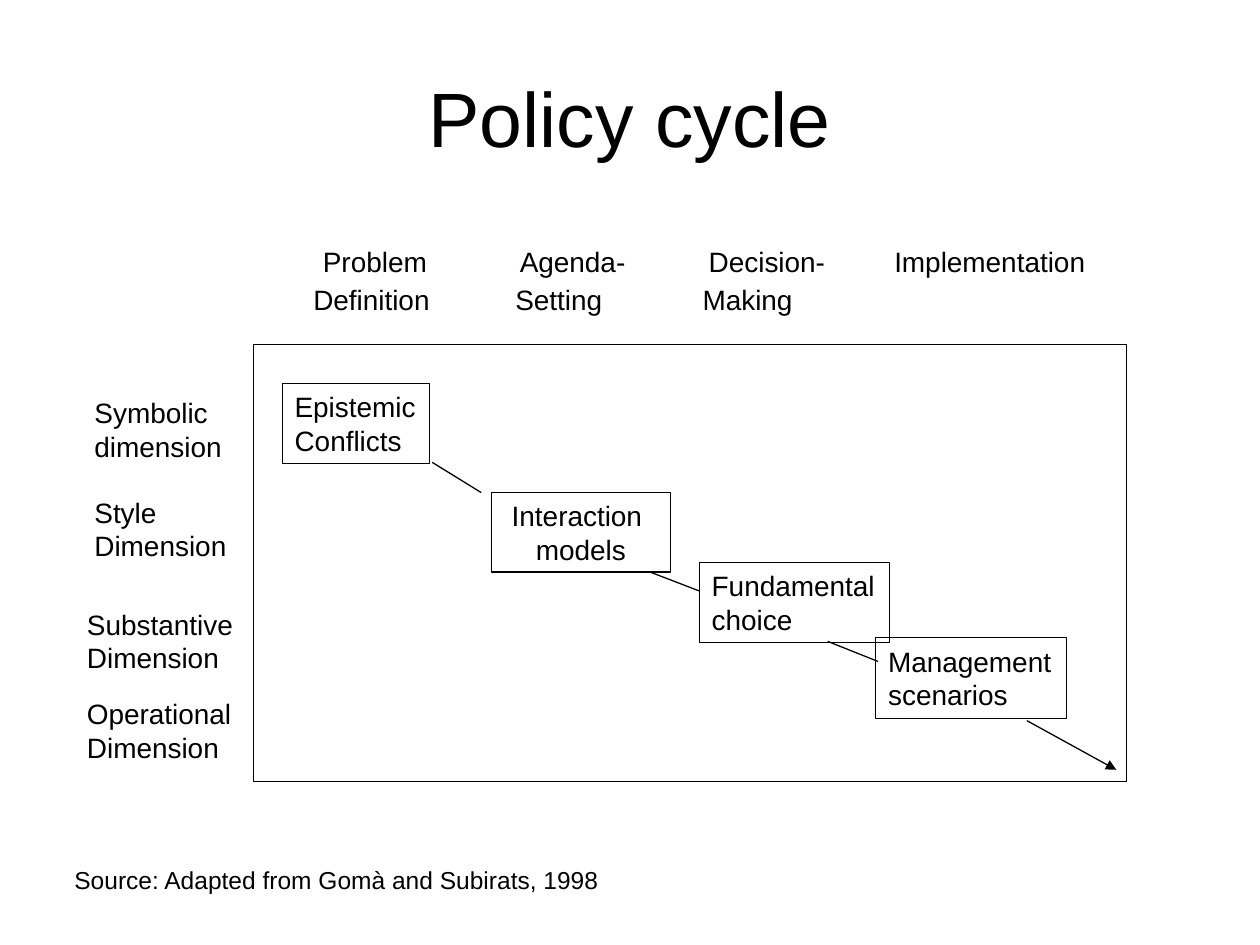
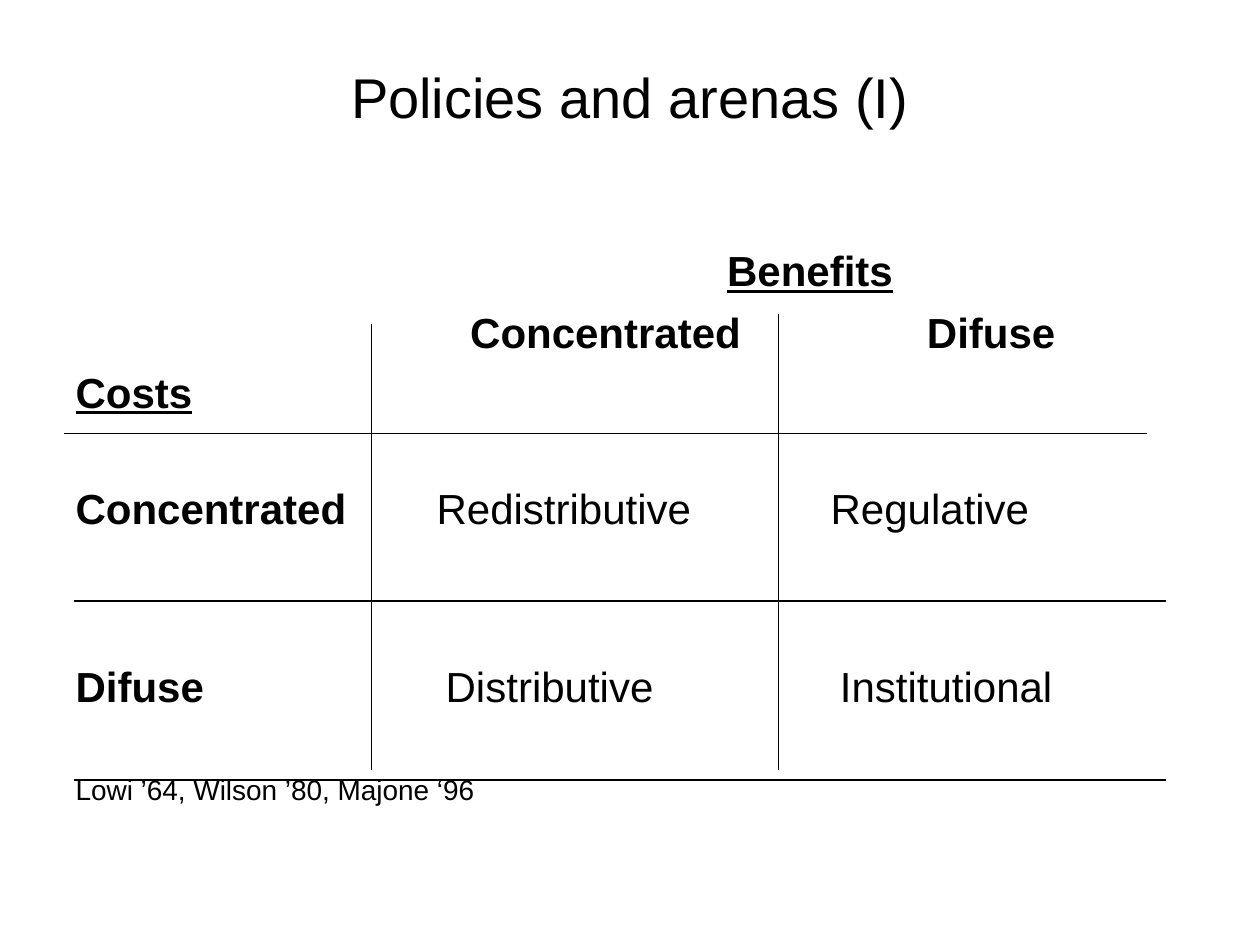
from dataclasses import dataclass

from lxml import etree
from pptx import Presentation
from pptx import util as u
from pptx.dml.color import RGBColor
from pptx.enum import shapes, text
from pptx.oxml import ns

Pt = u.Pt


@dataclass(frozen=True)
class Theme:
    font: str = "Arial"
    ink: RGBColor = RGBColor(0, 0, 0)
    paper: RGBColor = RGBColor(255, 255, 255)
    title: int = 44
    subtitle: int = 32
    matrix: int = 24
    body: int = 16
    source: int = 14
    hairline: float = 0.25
    line: float = 0.75


class Builder:
    """Holds the deck, its theme and the page being drawn."""

    def __init__(self, theme):
        self.theme = theme
        self.deck = Presentation()
        self.deck.slide_width, self.deck.slide_height = Pt(720), Pt(540)
        self.page = None

    def new_page(self, title, size, height):
        self.page = self.deck.slides.add_slide(self.deck.slide_layouts[6])
        box = self.page.shapes.add_textbox(Pt(36), Pt(21.6), Pt(648), Pt(height))
        box.text_frame.word_wrap = True
        box.text_frame.vertical_anchor = text.MSO_ANCHOR.MIDDLE
        self.add_lines(box.text_frame, [title], size, align=text.PP_ALIGN.CENTER)

    def add_lines(self, frame, lines, size, bold=False, underline=False,
                  align=text.PP_ALIGN.LEFT):
        for number, line in enumerate(lines):
            para = frame.add_paragraph() if number else frame.paragraphs[0]
            para.alignment = align
            span = para.add_run()
            span.text = line
            font = span.font
            font.name, font.size = self.theme.font, Pt(size)
            font.bold, font.underline = bold, underline
            font.color.rgb = self.theme.ink

    def label(self, lines, left, top, size, bold=False, underline=False):
        """Plain text whose first letter starts exactly at left, top."""
        width = 0.6 * size * max(map(len, lines))
        height = 1.15 * size * len(lines)
        box = self.page.shapes.add_textbox(Pt(left), Pt(top), Pt(width), Pt(height))
        frame = box.text_frame
        frame.word_wrap = True
        frame.margin_left = frame.margin_right = 0
        frame.margin_top = frame.margin_bottom = 0
        self.add_lines(frame, lines, size, bold, underline)

    def rectangle(self, left, top, width, height, lines=(), filled=False,
                  weight=None, align=text.PP_ALIGN.LEFT):
        box = self.page.shapes.add_shape(
            shapes.MSO_SHAPE.RECTANGLE, Pt(left), Pt(top), Pt(width), Pt(height))
        box.shadow.inherit = False
        if filled:
            box.fill.solid()
            box.fill.fore_color.rgb = self.theme.paper
        else:
            box.fill.background()
        box.line.color.rgb = self.theme.ink
        box.line.width = Pt(weight or self.theme.hairline)
        frame = box.text_frame
        frame.word_wrap = False
        frame.vertical_anchor = text.MSO_ANCHOR.MIDDLE
        self.add_lines(frame, lines, self.theme.body, align=align)

    def line(self, start_x, start_y, end_x, end_y, arrow=False):
        link = self.page.shapes.add_connector(
            shapes.MSO_CONNECTOR.STRAIGHT,
            Pt(start_x), Pt(start_y), Pt(end_x), Pt(end_y))
        link.line.color.rgb = self.theme.ink
        link.line.width = Pt(self.theme.line)
        properties = link._element.spPr
        if arrow:
            outline = properties.find(ns.qn("a:ln"))
            etree.SubElement(outline, ns.qn("a:tailEnd"), type="triangle")
        etree.SubElement(properties, ns.qn("a:effectLst"))


def policy_cycle(builder):
    theme = builder.theme
    builder.new_page("Policy cycle", theme.title, 90)

    stages_by_row = {
        139.8: [("Problem", 184.5), ("Agenda-", 297), ("Decision-", 405),
                ("Implementation", 511)],
        161.5: [("Definition", 179), ("Setting", 294.5), ("Making", 401.5)],
    }
    for top, stages in stages_by_row.items():
        for stage, left in stages:
            builder.label([stage], left, top, theme.body)

    builder.rectangle(144.7, 196.6, 499, 249.8, filled=True)
    builder.rectangle(280.8, 281.5, 102.2, 45.4, ["Interaction ", "models"],
                      filled=True, weight=theme.line,
                      align=text.PP_ALIGN.CENTER)
    for lines, left, top, width in [
        (["Epistemic", "Conflicts"], 161.3, 218.9, 84.2),
        (["Fundamental", "choice"], 399.6, 321.1, 108.7),
        (["Management", "scenarios"], 500.4, 364.3, 108.7),
    ]:
        builder.rectangle(left, top, width, 46.1, lines)

    builder.line(247, 264.2, 275, 281.5)
    builder.line(371.5, 326.9, 399.6, 337.7)
    builder.line(473, 366.5, 501.8, 378)
    builder.line(586.8, 411.8, 637.9, 439.9, arrow=True)

    for lines, left, top in [
        (["Symbolic", "dimension"], 54, 226.1),
        (["Style", "Dimension"], 54, 283),
        (["Substantive", "Dimension"], 49.7, 347),
        (["Operational", "Dimension"], 49.7, 398.2),
    ]:
        builder.label(lines, left, top, theme.body)
    builder.label(["Source: Adapted from Gomà and Subirats, 1998"],
                  42.5, 494.6, theme.source)


def policies_and_arenas(builder):
    theme = builder.theme
    builder.new_page("Policies and arenas (I)", theme.subtitle, 67)

    margin = 43.2
    concentrated_top, difuse_top = 276, 377.2
    for axis, left, top in [("Benefits", 415.5, 140), ("Costs", margin, 209.2)]:
        builder.label([axis], left, top, theme.matrix, bold=True, underline=True)
    for heading, left, top in [
        ("Concentrated", 268.7, 175.4),
        ("Difuse", 529.7, 175.4),
        ("Concentrated", margin, concentrated_top),
        ("Difuse", margin, difuse_top),
    ]:
        builder.label([heading], left, top, theme.matrix, bold=True)
    for arena, left, top in [
        ("Redistributive", 249.5, concentrated_top),
        ("Regulative", 474.7, concentrated_top),
        ("Distributive", 254.7, difuse_top),
        ("Institutional", 480, difuse_top),
    ]:
        builder.label([arena], left, top, theme.matrix)
    builder.label(["Lowi ’64, Wilson ’80, Majone ‘96"], margin, 441.5, theme.body)

    for left, right, y in [(36.7, 655.2, 247.7), (42.5, 666, 343.4),
                           (42.5, 666, 445.7)]:
        builder.line(left, y, right, y)
    for x, top in [(212.4, 185), (445, 179.3)]:
        builder.line(x, top, x, 439.9)


def main():
    builder = Builder(Theme())
    policy_cycle(builder)
    policies_and_arenas(builder)
    builder.deck.save("out.pptx")


if __name__ == "__main__":
    main()
